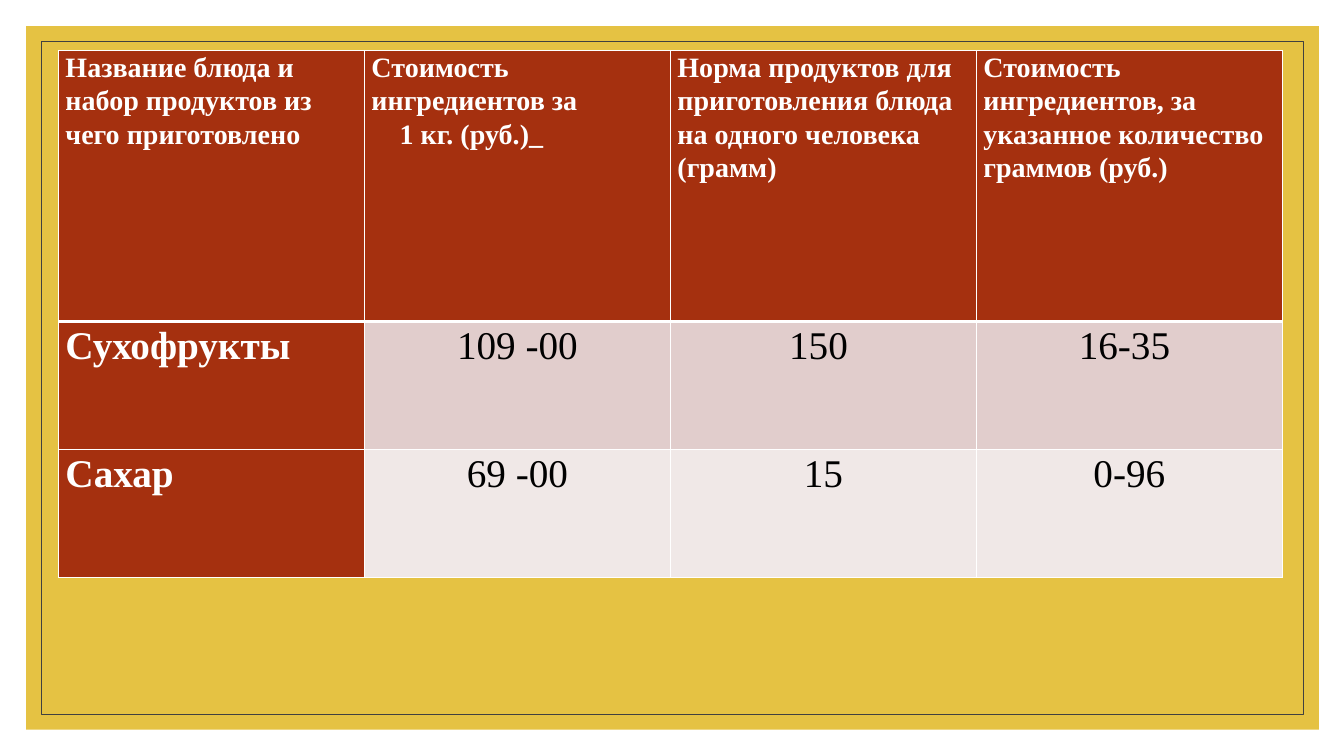
from dataclasses import dataclass

from lxml.etree import SubElement
from pptx import Presentation
from pptx.dml.color import RGBColor as Rgb
from pptx.enum.shapes import MSO_SHAPE as Shape
from pptx.enum.text import PP_ALIGN as Align
from pptx.oxml.ns import qn
from pptx.util import Inches, Pt


@dataclass(frozen=True)
class Theme:
    gold: str = "E5C243"
    edge: str = "404040"
    rust: str = "A5300F"
    bands: tuple[str, ...] = ("E1CDCC", "F0E8E7")
    white: str = "FFFFFF"
    black: str = "000000"
    font: str = "Times New Roman"
    head: int = 20
    body: int = 28
    lead: float = 1.07


@dataclass(frozen=True)
class Frame:
    left: float
    top: float
    width: float
    height: float
    fill: str | None = None
    line: str | None = None


@dataclass(frozen=True)
class Style:
    fill: str
    color: str
    size: int
    bold: bool
    align: Align
    base: int = 1


THEME = Theme()
FRAMES = (
    Frame(0.26, 0.26, 12.82, 6.98, fill=THEME.gold),
    Frame(0.41, 0.41, 12.52, 6.68, line=THEME.edge),
)
ROWS = (
    ("Название блюда и набор продуктов из чего приготовлено",
     "Стоимость ингредиентов за\n1 кг. (руб.)_",
     "Норма продуктов для приготовления блюда на одного человека (грамм)",
     "Стоимость ингредиентов, за указанное количество граммов (руб.)"),
    ("Сухофрукты", "109 -00", "150 ", "16-35 "),
    ("Сахар", "69 -00", "15", "0-96"),
)
TALL = (2.69, 1.27, 1.27)
WIDE = 12.14
INDENT = 0.28


def add_frame(slide, frame: Frame) -> None:
    box = slide.shapes.add_shape(
        Shape.RECTANGLE, Inches(frame.left), Inches(frame.top),
        Inches(frame.width), Inches(frame.height))
    box.shadow.inherit = False
    if frame.fill:
        box.fill.solid()
        box.fill.fore_color.rgb = Rgb.from_string(frame.fill)
    else:
        box.fill.background()
    if frame.line:
        box.line.color.rgb = Rgb.from_string(frame.line)
        box.line.width = Pt(0.5)
    else:
        box.line.fill.background()


def pick_style(row: int, col: int) -> Style:
    if row == 0:
        return Style(THEME.rust, THEME.white, THEME.head, True, Align.LEFT, 3)
    if col == 0:
        return Style(THEME.rust, THEME.white, THEME.body, True, Align.LEFT)
    band = THEME.bands[(row - 1) % len(THEME.bands)]
    return Style(band, THEME.black, THEME.body, False, Align.CENTER)


def add_edges(cell, top: int, base: int) -> None:
    # Borders come before the fill in the cell properties
    props = cell._tc.get_or_add_tcPr()
    for side, width in (("L", 1), ("R", 1), ("T", top), ("B", base)):
        line = SubElement(props, qn(f"a:ln{side}"), w=str(Pt(width)))
        paint = SubElement(line, qn("a:solidFill"))
        SubElement(paint, qn("a:srgbClr"), val=THEME.white)


def fill_cell(cell, text: str, style: Style, top: int) -> None:
    add_edges(cell, top, style.base)
    cell.fill.solid()
    cell.fill.fore_color.rgb = Rgb.from_string(style.fill)
    cell.margin_left = cell.margin_right = Inches(0.07)
    cell.margin_top = cell.margin_bottom = 0
    cell.text_frame.text = text
    for n, para in enumerate(cell.text_frame.paragraphs):
        para.alignment = style.align
        para.line_spacing = THEME.lead
        if n:
            para._p.get_or_add_pPr().set("marL", str(Inches(INDENT)))
        for run in para.runs:
            run.font.name = THEME.font
            run.font.size = Pt(style.size)
            run.font.bold = style.bold
            run.font.color.rgb = Rgb.from_string(style.color)


def add_costs(slide) -> None:
    count = len(ROWS[0])
    table = slide.shapes.add_table(
        len(ROWS), count, Inches(0.58), Inches(0.5),
        Inches(WIDE), Inches(sum(TALL))).table
    for col in table.columns:
        col.width = Inches(WIDE / count)
    top = 1
    for r, (texts, tall) in enumerate(zip(ROWS, TALL)):
        table.rows[r].height = Inches(tall)
        for c, text in enumerate(texts):
            fill_cell(table.cell(r, c), text, pick_style(r, c), top)
        top = pick_style(r, 0).base


def main() -> None:
    deck = Presentation()
    deck.slide_width, deck.slide_height = Inches(13.33), Inches(7.5)
    slide = deck.slides.add_slide(deck.slide_layouts[6])

    # Gold panel with its thin inner outline
    for frame in FRAMES:
        add_frame(slide, frame)

    # Ingredient costs
    add_costs(slide)
    deck.save("out.pptx")


if __name__ == "__main__":
    main()
